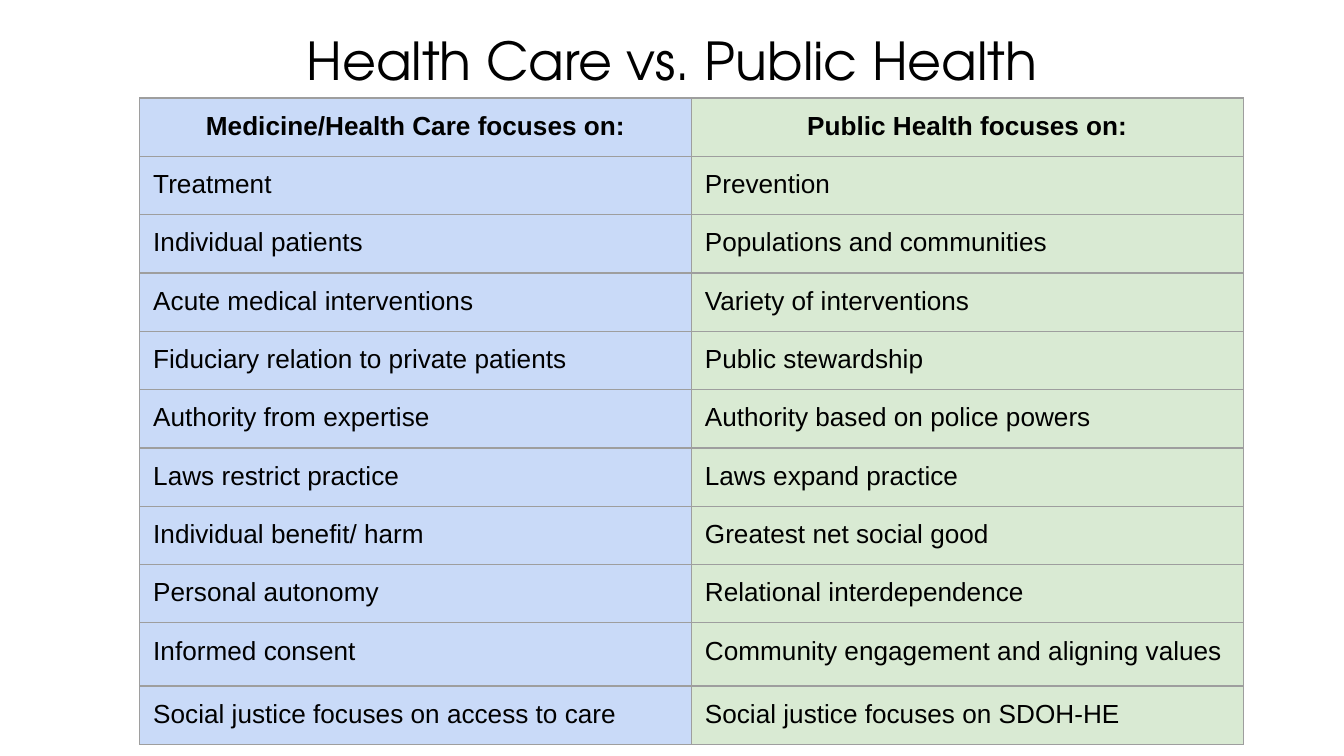
from lxml import etree
from pptx import Presentation
from pptx.dml.color import RGBColor
from pptx.enum.text import MSO_ANCHOR, PP_ALIGN
from pptx.oxml.ns import qn
from pptx.util import Inches, Pt

CENTER = PP_ALIGN.CENTER
LEFT = PP_ALIGN.LEFT
TOP = MSO_ANCHOR.TOP

TITLE_FONT = "TeX Gyre Adventor"
BODY_FONT = "Arial"
TEXT_COLOR = "000000"
BORDER_COLOR = "9E9E9E"
COLUMN_FILLS = ("C9DAF8", "D9EAD3")
TABLE_WIDTH = 8.21
TABLE_HEIGHT = 4.81
ROW_HEIGHT = 0.41
TALL_ROW_HEIGHT = 0.47
TALL_ROW = 9

COMPARISON = [
    ("Medicine/Health Care focuses on:", "Public Health focuses on:"),
    ("Treatment", "Prevention"),
    ("Individual patients", "Populations and communities"),
    ("Acute medical interventions", "Variety of interventions"),
    ("Fiduciary relation to private patients", "Public stewardship"),
    ("Authority from expertise", "Authority based on police powers"),
    ("Laws restrict practice", "Laws expand practice"),
    ("Individual benefit/ harm", "Greatest net social good"),
    ("Personal autonomy", "Relational interdependence"),
    ("Informed consent", "Community engagement and aligning values"),
    ("Social justice focuses on access to care", "Social justice focuses on SDOH-HE"),
]


def color(hex_string):
    """Turn a hex string into a colour."""
    return RGBColor.from_string(hex_string)


def set_margins(holder):
    """Give a text frame or table cell equal insets."""
    holder.margin_left = holder.margin_right = Inches(0.1)
    holder.margin_top = holder.margin_bottom = Inches(0.1)


def add_text(paragraph, text, font_name, size, alignment, bold=False):
    """Add one formatted run to a paragraph."""
    paragraph.alignment = alignment
    run = paragraph.add_run()
    run.text = text
    run.font.name = font_name
    run.font.size = Pt(size)
    run.font.bold = bold
    run.font.color.rgb = color(TEXT_COLOR)


def add_title(slide, text):
    """Add the centred slide title."""
    shape = slide.shapes.add_textbox(Inches(0.34), Inches(0.11), Inches(9.32), Inches(0.63))
    frame = shape.text_frame
    frame.word_wrap = True
    frame.vertical_anchor = TOP
    set_margins(frame)
    add_text(frame.paragraphs[0], text, TITLE_FONT, 28, CENTER)


def set_borders(cell):
    """Draw a thin solid line on all four sides of a cell."""
    properties = cell._tc.get_or_add_tcPr()
    for side in ("a:lnL", "a:lnR", "a:lnT", "a:lnB"):
        line = etree.SubElement(properties, qn(side), w=str(Pt(0.75)))
        fill = etree.SubElement(line, qn("a:solidFill"))
        etree.SubElement(fill, qn("a:srgbClr"), val=BORDER_COLOR)


def fill_cell(cell, text, fill_color, is_header):
    """Style one table cell and write its text."""
    set_borders(cell)
    cell.fill.solid()
    cell.fill.fore_color.rgb = color(fill_color)
    cell.vertical_anchor = TOP
    set_margins(cell)
    alignment = CENTER if is_header else LEFT
    add_text(cell.text_frame.paragraphs[0], text, BODY_FONT, 14, alignment, is_header)


def add_comparison_table(slide, rows):
    """Add the two-column comparison table."""
    frame = slide.shapes.add_table(
        len(rows), len(COLUMN_FILLS), Inches(1.04), Inches(0.73),
        Inches(TABLE_WIDTH), Inches(TABLE_HEIGHT),
    )
    table = frame.table
    for row_index, texts in enumerate(rows):
        height = TALL_ROW_HEIGHT if row_index == TALL_ROW else ROW_HEIGHT
        table.rows[row_index].height = Inches(height)
        for column_index, (text, fill_color) in enumerate(zip(texts, COLUMN_FILLS)):
            fill_cell(table.cell(row_index, column_index), text, fill_color, row_index == 0)
    frame.height = Inches(TABLE_HEIGHT)


def main():
    """Build and save the presentation."""
    presentation = Presentation()
    presentation.slide_width = Inches(10)
    presentation.slide_height = presentation.slide_width * 9 // 16
    slide = presentation.slides.add_slide(presentation.slide_layouts[6])
    add_title(slide, "Health Care vs. Public Health")
    add_comparison_table(slide, COMPARISON)
    presentation.save("out.pptx")


if __name__ == "__main__":
    main()
